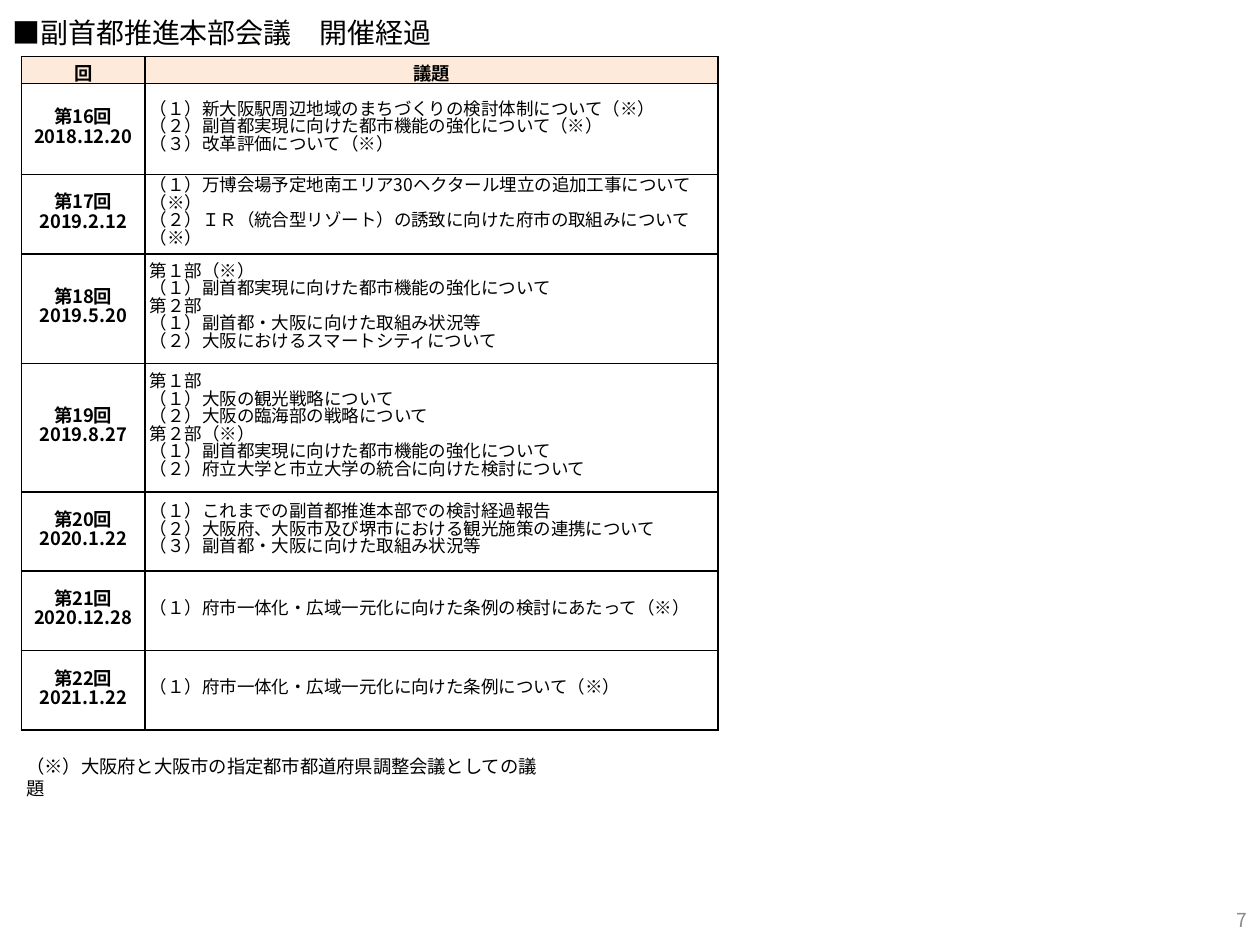
from lxml import etree
from pptx import Presentation
from pptx.dml.color import RGBColor
from pptx.enum.lang import MSO_LANGUAGE_ID
from pptx.enum.text import MSO_ANCHOR, MSO_AUTO_SIZE, PP_ALIGN
from pptx.oxml.ns import qn
from pptx.util import Inches, Pt

FONT = "Noto Sans CJK JP"
BLACK = RGBColor(0x00, 0x00, 0x00)
GRAY = RGBColor(0x8C, 0x8C, 0x8C)
PEACH = RGBColor(0xFD, 0xEA, 0xDA)
LEFT, CENTER, RIGHT = PP_ALIGN.LEFT, PP_ALIGN.CENTER, PP_ALIGN.RIGHT
TOP, MIDDLE = MSO_ANCHOR.TOP, MSO_ANCHOR.MIDDLE
JAPANESE = MSO_LANGUAGE_ID.JAPANESE
FIT_SHAPE = MSO_AUTO_SIZE.SHAPE_TO_FIT_TEXT
TITLE_ONLY = 5

SLIDE_W, SLIDE_H = 10, 7.5
TABLE_X, TABLE_Y = 0.17, 0.45
COLS = [0.98, 4.55]
ROWS = [0.18, 0.72, 0.63, 0.87, 1.02, 0.63, 0.63, 0.63]

HEADERS = ["回", "議題"]
MEETINGS = [
    ("第16回", "2018.12.20", [
        "（１）新大阪駅周辺地域のまちづくりの検討体制について（※）",
        "（２）副首都実現に向けた都市機能の強化について（※）",
        "（３）改革評価について（※）"]),
    ("第17回", "2019.2.12", [
        "（１）万博会場予定地南エリア30ヘクタール埋立の追加工事について（※）",
        "（２）ＩＲ（統合型リゾート）の誘致に向けた府市の取組みについて（※）"]),
    ("第18回", "2019.5.20", [
        "第１部（※）",
        "（１）副首都実現に向けた都市機能の強化について",
        "第２部",
        "（１）副首都・大阪に向けた取組み状況等",
        "（２）大阪におけるスマートシティについて"]),
    ("第19回", "2019.8.27", [
        "第１部",
        "（１）大阪の観光戦略について",
        "（２）大阪の臨海部の戦略について",
        "第２部（※）",
        "（１）副首都実現に向けた都市機能の強化について",
        "（２）府立大学と市立大学の統合に向けた検討について"]),
    ("第20回", "2020.1.22", [
        "（１）これまでの副首都推進本部での検討経過報告",
        "（２）大阪府、大阪市及び堺市における観光施策の連携について",
        "（３）副首都・大阪に向けた取組み状況等"]),
    ("第21回", "2020.12.28", [
        "（１）府市一体化・広域一元化に向けた条例の検討にあたって（※）"]),
    ("第22回", "2021.1.22", [
        "（１）府市一体化・広域一元化に向けた条例について（※）"]),
]


def write(tf, lines, size, color=BLACK, bold=False, align=LEFT, leading=None):
    """Fill a text frame, one paragraph a line; leading is in points."""
    tf.text = "\n".join(lines)
    for p in tf.paragraphs:
        p.alignment = align
        if leading:
            p.line_spacing = Pt(leading)
        for r in p.runs:
            r.font.size = Pt(size)
            r.font.bold = bold
            r.font.color.rgb = color
            r.font.name = FONT
            r.font.language_id = JAPANESE
            latin = r.font._element.find(qn("a:latin"))
            ea = etree.Element(qn("a:ea"), typeface=FONT)
            latin.addnext(ea)


def set_margins(tf, x, y):
    tf.margin_left = tf.margin_right = Inches(x)
    tf.margin_top = tf.margin_bottom = Inches(y)


def add_borders(cell):
    tcPr = cell._tc.get_or_add_tcPr()
    for side in ("lnL", "lnR", "lnT", "lnB"):
        ln = etree.SubElement(tcPr, qn(f"a:{side}"), w=str(Pt(1)))
        fill = etree.SubElement(ln, qn("a:solidFill"))
        etree.SubElement(fill, qn("a:srgbClr"), val=str(BLACK))


def fill_cell(cell, lines, fill=None, **style):
    set_margins(cell, 0.04, 0.02)
    cell.vertical_anchor = MIDDLE
    add_borders(cell)
    if fill:
        cell.fill.solid()
        cell.fill.fore_color.rgb = fill
    else:
        cell.fill.background()
    write(cell.text_frame, lines, **style)


def add_title(s, text):
    sp = s.shapes.title
    sp.left, sp.top = Inches(0.06), Inches(0.08)
    sp.width, sp.height = Inches(3.97), Inches(0.35)
    tf = sp.text_frame
    set_margins(tf, 0.04, 0.04)
    tf.vertical_anchor = MIDDLE
    tf.auto_size = FIT_SHAPE
    write(tf, [text], 16)
    p = tf.paragraphs[0]
    p.space_before = Pt(6)
    pPr = p._p.get_or_add_pPr()
    pPr.set("marL", str(Inches(0.19)))
    pPr.set("indent", str(-Inches(0.19)))


def add_meeting_table(s):
    frame = s.shapes.add_table(len(ROWS), len(COLS), Inches(TABLE_X), Inches(TABLE_Y),
                               Inches(sum(COLS)), Inches(sum(ROWS)))
    table = frame.table
    for col, width in zip(table.columns, COLS):
        col.width = Inches(width)
    for row, height in zip(table.rows, ROWS):
        row.height = Inches(height)
    for i, header in enumerate(HEADERS):
        fill_cell(table.cell(0, i), [header], PEACH, size=10.5, bold=True, align=CENTER)
    for i, (number, date, topics) in enumerate(MEETINGS, start=1):
        fill_cell(table.cell(i, 0), [number, date], size=10.5, bold=True,
                  align=CENTER, leading=11)
        fill_cell(table.cell(i, 1), topics, size=10, leading=10)


def add_text(s, text, x, y, w, h, size, margins=(0.1, 0.05), anchor=TOP, **style):
    tf = s.shapes.add_textbox(Inches(x), Inches(y), Inches(w), Inches(h)).text_frame
    tf.word_wrap = True
    tf.vertical_anchor = anchor
    set_margins(tf, *margins)
    write(tf, [text], size, **style)


def main():
    prs = Presentation()
    prs.slide_width, prs.slide_height = Inches(SLIDE_W), Inches(SLIDE_H)
    s = prs.slides.add_slide(prs.slide_layouts[TITLE_ONLY])
    add_title(s, "■副首都推進本部会議　開催経過")
    add_meeting_table(s)
    add_text(s, "（※）大阪府と大阪市の指定都市都道府県調整会議としての議題",
             TABLE_X, 5.95, 4.17, 0.26, 10.5, margins=(0.04, 0.04))
    number_w, number_h = 2.33, 0.4
    add_text(s, "7", SLIDE_W - number_w, SLIDE_H - number_h, number_w, number_h, 11,
             anchor=MIDDLE, color=GRAY, align=RIGHT)
    prs.save("out.pptx")


if __name__ == "__main__":
    main()
